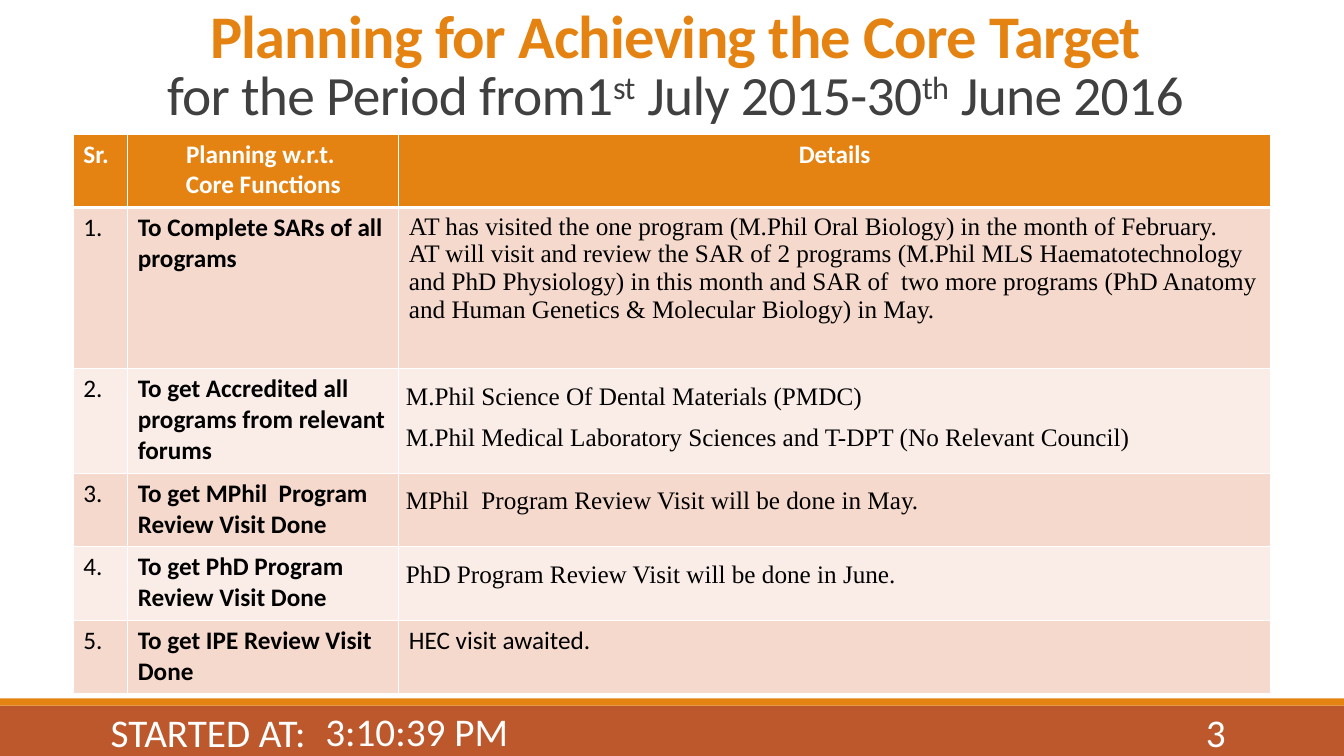
from dataclasses import dataclass

from lxml.etree import SubElement
from pptx import Presentation
from pptx.dml.color import RGBColor as Rgb
from pptx.enum.shapes import MSO_SHAPE as Shape
from pptx.enum.text import MSO_ANCHOR as Anchor, PP_ALIGN as Align
from pptx.oxml.ns import qn
from pptx.util import Cm, Pt


@dataclass(frozen=True)
class Theme:
    orange: str = "E48312"
    rust: str = "BD582C"
    grey: str = "404040"
    white: str = "FFFFFF"
    black: str = "000000"
    bands: tuple = ("F5D9CC", "FAEDE7")
    sans: str = "Calibri"
    serif: str = "Times New Roman"
    title: float = 43.2
    subtitle: float = 39.6
    footer: float = 28
    body: float = 18


class SlideBuilder:
    def __init__(self, page, theme):
        self.page = page
        self.theme = theme

    def span(self, para, text, size, color, font=None, bold=False, **extras):
        span = para.add_run()
        span.text = text
        span.font.name = font or self.theme.sans
        span.font.size = Pt(size)
        span.font.bold = bold
        span.font.color.rgb = Rgb.from_string(color)
        for name, value in extras.items():
            span._r.get_or_add_rPr().set(name, str(value))

    def bar(self, top, height, color):
        bar = self.page.shapes.add_shape(
            Shape.RECTANGLE, 0, Cm(top), Cm(33.87), Cm(height))
        bar.shadow.inherit = False
        bar.fill.solid()
        bar.fill.fore_color.rgb = Rgb.from_string(color)
        bar.line.fill.background()

    def text_box(self, left, top, width, height, anchor, align):
        box = self.page.shapes.add_textbox(Cm(left), Cm(top), Cm(width), Cm(height))
        frame = box.text_frame
        frame.word_wrap = True
        frame.vertical_anchor = anchor
        para = frame.paragraphs[0]
        para.alignment = align
        return para

    def footer(self, text, left, top, width, align):
        para = self.text_box(left, top, width, 1.02, Anchor.MIDDLE, align)
        self.span(para, text, self.theme.footer, self.theme.white)

    def table(self, left, top, widths, heights):
        frame = self.page.shapes.add_table(
            len(heights), len(widths), Cm(left), Cm(top),
            Cm(sum(widths)), Cm(sum(heights)))
        for column, width in zip(frame.table.columns, widths):
            column.width = Cm(width)
        for row, height in zip(frame.table.rows, heights):
            row.height = Cm(height)
        return frame.table

    def borders(self, cell, top, bottom):
        props = cell._tc.get_or_add_tcPr()
        for side, points in (("L", 1), ("R", 1), ("T", top), ("B", bottom)):
            line = SubElement(props, qn(f"a:ln{side}"), w=str(Pt(points)))
            fill = SubElement(line, qn("a:solidFill"))
            SubElement(fill, qn("a:srgbClr"), val=self.theme.white)

    def cell(self, cell, lines, fill, color, font=None, bold=False,
             align=Align.LEFT, spacing=None, edges=(1, 1)):
        self.borders(cell, *edges)
        cell.fill.solid()
        cell.fill.fore_color.rgb = Rgb.from_string(fill)
        if spacing:
            cell.margin_left = cell.margin_right = Cm(0.18)
            cell.margin_top = cell.margin_bottom = 0
        for number, text in enumerate(lines):
            frame = cell.text_frame
            para = frame.add_paragraph() if number else frame.paragraphs[0]
            para.alignment = align
            if spacing:
                para.line_spacing = spacing
            self.span(para, text, self.theme.body, color, font, bold)


def main():
    theme = Theme()
    deck = Presentation()
    deck.slide_width, deck.slide_height = Cm(33.87), Cm(19.05)
    page = deck.slides.add_slide(deck.slide_layouts[6])
    builder = SlideBuilder(page, theme)

    # Bottom bars
    builder.bar(17.78, 1.27, theme.rust)
    builder.bar(17.6, 0.18, theme.orange)

    # Title
    title = builder.text_box(3.05, 0, 27.94, 3.33, Anchor.BOTTOM, Align.CENTER)
    title.line_spacing = 0.85
    builder.span(title, "Planning for Achieving the Core Target",
                 theme.title, theme.orange, bold=True, spc=-50)
    title.add_line_break()
    for text, baseline in (("for the Period from1", 0), ("st", 30000),
                           (" July 2015-30", 0), ("th", 30000), (" June 2016", 0)):
        builder.span(title, text, theme.subtitle, theme.grey,
                     spc=-50, baseline=baseline)

    # Planning table: header, then one row per core function
    table = builder.table(1.85, 3.38, (1.37, 6.83, 21.97),
                          (1.85, 4.06, 2.64, 1.85, 1.85, 1.85))
    headings = ((["Sr."], Align.LEFT),
                (["Planning w.r.t. ", "Core Functions"], Align.CENTER),
                (["Details"], Align.CENTER))
    for column, (lines, align) in enumerate(headings):
        builder.cell(table.cell(0, column), lines, theme.orange, theme.white,
                     bold=True, align=align, edges=(1, 3))

    serif = {"font": theme.serif}
    spaced = {"font": theme.serif, "align": Align.JUSTIFY, "spacing": 1.5}
    plans = (
        ("To Complete SARs of all programs",
         ["AT has visited the one program (M.Phil Oral Biology) in the month of February.",
          "AT will visit and review the SAR of 2 programs (M.Phil MLS Haematotechnology "
          "and PhD Physiology) in this month and SAR of  two more programs (PhD Anatomy "
          "and Human Genetics & Molecular Biology) in May."], serif),
        ("To get Accredited all programs from relevant forums",
         ["M.Phil Science Of Dental Materials (PMDC)",
          "M.Phil Medical Laboratory Sciences and T-DPT (No Relevant Council)"], spaced),
        ("To get MPhil  Program Review Visit Done",
         ["MPhil  Program Review Visit will be done in May."], spaced),
        ("To get PhD Program Review Visit Done",
         ["PhD Program Review Visit will be done in June."], spaced),
        ("To get IPE Review Visit Done", ["HEC visit awaited."], {}),
    )
    for row, (function, details, style) in enumerate(plans, start=1):
        band = theme.bands[(row - 1) % 2]
        edges = (3 if row == 1 else 1, 1)
        contents = (([f"{row}."], {}), ([function], {"bold": True}), (details, style))
        for column, (lines, look) in enumerate(contents):
            builder.cell(table.cell(row, column), lines, band, theme.black,
                         edges=edges, **look)

    # Footer
    builder.footer("3:10:39 PM", 7.95, 17.91, 6.86, Align.LEFT)
    builder.footer("3", 27.51, 17.93, 3.63, Align.RIGHT)
    builder.footer("STARTED AT:", 0.28, 17.93, 7.67, Align.RIGHT)

    deck.save("out.pptx")


if __name__ == "__main__":
    main()
